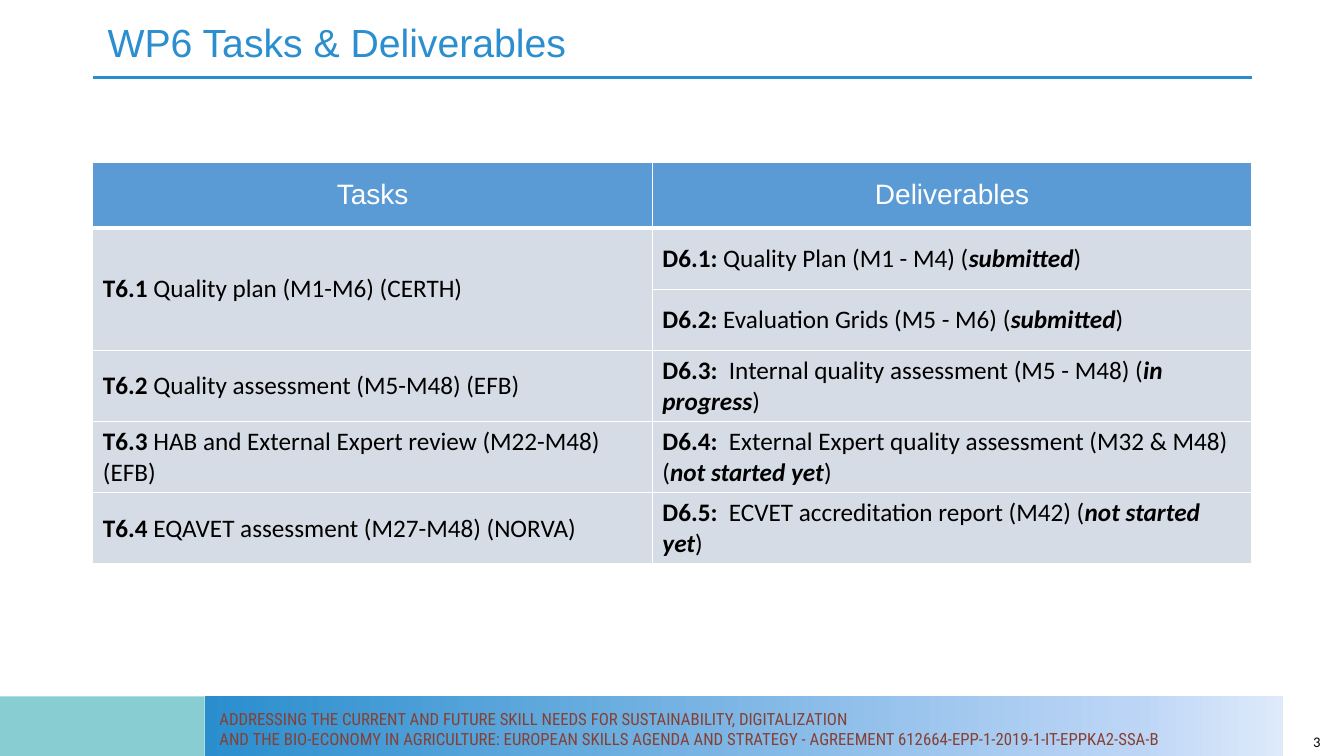
from copy import deepcopy
from dataclasses import dataclass

from lxml.etree import SubElement
from pptx import Presentation
from pptx.dml.color import RGBColor
from pptx.enum.shapes import MSO_CONNECTOR, MSO_SHAPE
from pptx.enum.text import MSO_ANCHOR, MSO_AUTO_SIZE, PP_ALIGN
from pptx.oxml.ns import qn
from pptx.util import Cm, Pt

WHITE, BLACK, BLUE = "FFFFFF", "000000", "2A8ECE"
LEFT, WIDE = 2.34, 29.21
BAR_TOP, BAR_HIGH, SPLIT, BAR_END = 17.55, 1.5, 5.16, 32.33

HEAD = {"name": "Arial", "size": Pt(20), "bold": False}
BODY = {"name": "Calibri", "size": Pt(18), "bold": False, "italic": False}
TITLE = {"name": "Arial", "size": Pt(28), "bold": False}
FOOT = {"name": "Roboto Condensed", "size": Pt(12)}
PAGE = {"name": "Calibri", "size": Pt(10.5)}


@dataclass
class Box:
    left: float
    top: float
    width: float
    height: float

    def sides(self) -> list:
        return [Cm(v) for v in (self.left, self.top, self.width, self.height)]


@dataclass
class Entry:
    row: int
    col: int
    code: str
    text: str
    state: str = ""


ENTRIES = [
    Entry(1, 0, "T6.1 ", "Quality plan (M1-M6) (CERTH)"),
    Entry(3, 0, "T6.2", " Quality assessment (M5-M48) (EFB)"),
    Entry(4, 0, "T6.3", " HAB and External Expert review (M22-M48) (EFB)"),
    Entry(5, 0, "T6.4 ", "EQAVET assessment (M27-M48) (NORVA)"),
    Entry(1, 1, "D6.1: ", "Quality Plan (M1 - M4) (", "submitted"),
    Entry(2, 1, "D6.2: ", "Evaluation Grids (M5 - M6) (", "submitted"),
    Entry(3, 1, "D6.3:  ", "Internal quality assessment (M5 - M48) (", "in progress"),
    Entry(4, 1, "D6.4: ", " External Expert quality assessment (M32 & M48) (", "not started yet"),
    Entry(5, 1, "D6.5: ", " ECVET accreditation report (M42) (", "not started yet"),
]


def paint(target, color: str) -> None:
    if hasattr(target, "solid"):
        target.solid()
        target = target.fore_color
    target.rgb = RGBColor.from_string(color)


def style(run, form: dict, color: str) -> None:
    for key, value in form.items():
        setattr(run.font, key, value)
    paint(run.font.color, color)


def write(para, text: str, form: dict, color: str, align=PP_ALIGN.LEFT) -> None:
    para.text = text
    para.alignment = align
    for run in para.runs:
        style(run, form, color)


def label(slide, box: Box, text: str, form: dict, color: str, align=PP_ALIGN.LEFT):
    frame = slide.shapes.add_textbox(*box.sides()).text_frame
    frame.word_wrap = True
    write(frame.paragraphs[0], text, form, color, align)
    return frame


def block(slide, box: Box):
    shape = slide.shapes.add_shape(MSO_SHAPE.RECTANGLE, *box.sides())
    shape.shadow.inherit = False
    shape.line.fill.background()
    return shape


def banner(slide) -> None:
    paint(block(slide, Box(0, BAR_TOP, SPLIT, BAR_HIGH)).fill, "87CDD1")
    fade = block(slide, Box(SPLIT, BAR_TOP, BAR_END - SPLIT, BAR_HIGH))
    fade.fill.gradient()
    fade.fill.gradient_angle = 0
    stops = next(fade.element.iter(qn("a:gsLst")))
    stops.append(deepcopy(stops[0]))
    shades = [(0, BLUE), (0.86, "BCD5F6"), (1, "DEEAFA")]
    for stop, (place, color) in zip(fade.fill.gradient_stops, shades):
        stop.position = place
        paint(stop.color, color)
    text = (
        "ADDRESSING THE CURRENT AND FUTURE SKILL NEEDS FOR SUSTAINABILITY, DIGITALIZATION \v"
        "AND THE BIO-ECONOMY IN AGRICULTURE: EUROPEAN SKILLS AGENDA AND STRATEGY"
        " - AGREEMENT 612664-EPP-1-2019-1-IT-EPPKA2-SSA-B"
    )
    label(slide, Box(5.28, 17.73, 27.05, 1.27), text, FOOT, "864033")


def border(cell, base: float) -> None:
    props = cell._tc.get_or_add_tcPr()
    for side, width in (("L", 1), ("R", 1), ("T", 1), ("B", base)):
        edge = SubElement(props, qn(f"a:ln{side}"), w=str(Pt(width)))
        fill = SubElement(edge, qn("a:solidFill"))
        SubElement(fill, qn("a:srgbClr"), val=WHITE)


def fill_in(cell, entry: Entry) -> None:
    bold = {**BODY, "bold": True}
    parts = [(entry.code, bold), (entry.text, BODY)]
    if entry.state:
        parts += [(entry.state, {**bold, "italic": True}), (")", BODY)]
    for text, form in parts:
        run = cell.text_frame.paragraphs[0].add_run()
        run.text = text
        style(run, form, BLACK)


def grid(slide) -> None:
    rows = [1.65, 1.55, 1.55, 1.79, 1.79, 1.79]
    cols = [14.1, 15.11]
    box = Box(LEFT, 4.09, WIDE, sum(rows))
    table = slide.shapes.add_table(len(rows), len(cols), *box.sides()).table
    table.horz_banding = False
    for row, high in zip(table.rows, rows):
        row.height = Cm(high)
    for col, wide in zip(table.columns, cols):
        col.width = Cm(wide)
    for spot, cell in enumerate(table.iter_cells()):
        top = spot < len(cols)
        border(cell, 3 if top else 1)
        paint(cell.fill, "5B9BD5" if top else "D6DCE5")
        cell.vertical_anchor = MSO_ANCHOR.MIDDLE
    table.cell(1, 0).merge(table.cell(2, 0))
    for col, text in enumerate(("Tasks", "Deliverables")):
        para = table.cell(0, col).text_frame.paragraphs[0]
        write(para, text, HEAD, WHITE, PP_ALIGN.CENTER)
    for entry in ENTRIES:
        fill_in(table.cell(entry.row, entry.col), entry)


def heading(slide) -> None:
    title = slide.shapes.title
    sides = Box(2.46, 0.48, WIDE, 1.5).sides()
    for key, value in zip(("left", "top", "width", "height"), sides):
        setattr(title, key, value)
    frame = title.text_frame
    frame.auto_size = MSO_AUTO_SIZE.NONE
    frame.vertical_anchor = MSO_ANCHOR.TOP
    para = frame.paragraphs[0]
    write(para, "WP6 Tasks & Deliverables", TITLE, "2B8ECE")
    para.line_spacing = 0.9


def rule(slide) -> None:
    ends = [Cm(v) for v in (LEFT, 1.96, LEFT + WIDE, 1.96)]
    line = slide.shapes.add_connector(MSO_CONNECTOR.STRAIGHT, *ends)
    line.line.width = Pt(2.25)
    paint(line.line.fill, BLUE)
    SubElement(line.element.spPr, qn("a:effectLst"))


def main() -> None:
    deck = Presentation()
    deck.slide_width, deck.slide_height = Cm(33.87), Cm(19.05)
    slide = deck.slides.add_slide(deck.slide_layouts[5])
    rule(slide)
    banner(slide)
    grid(slide)
    page = label(slide, Box(25.91, 18.36, 7.62, 0.64), "3", PAGE, BLACK, PP_ALIGN.RIGHT)
    page.vertical_anchor = MSO_ANCHOR.MIDDLE
    heading(slide)
    deck.save("out.pptx")


if __name__ == "__main__":
    main()
